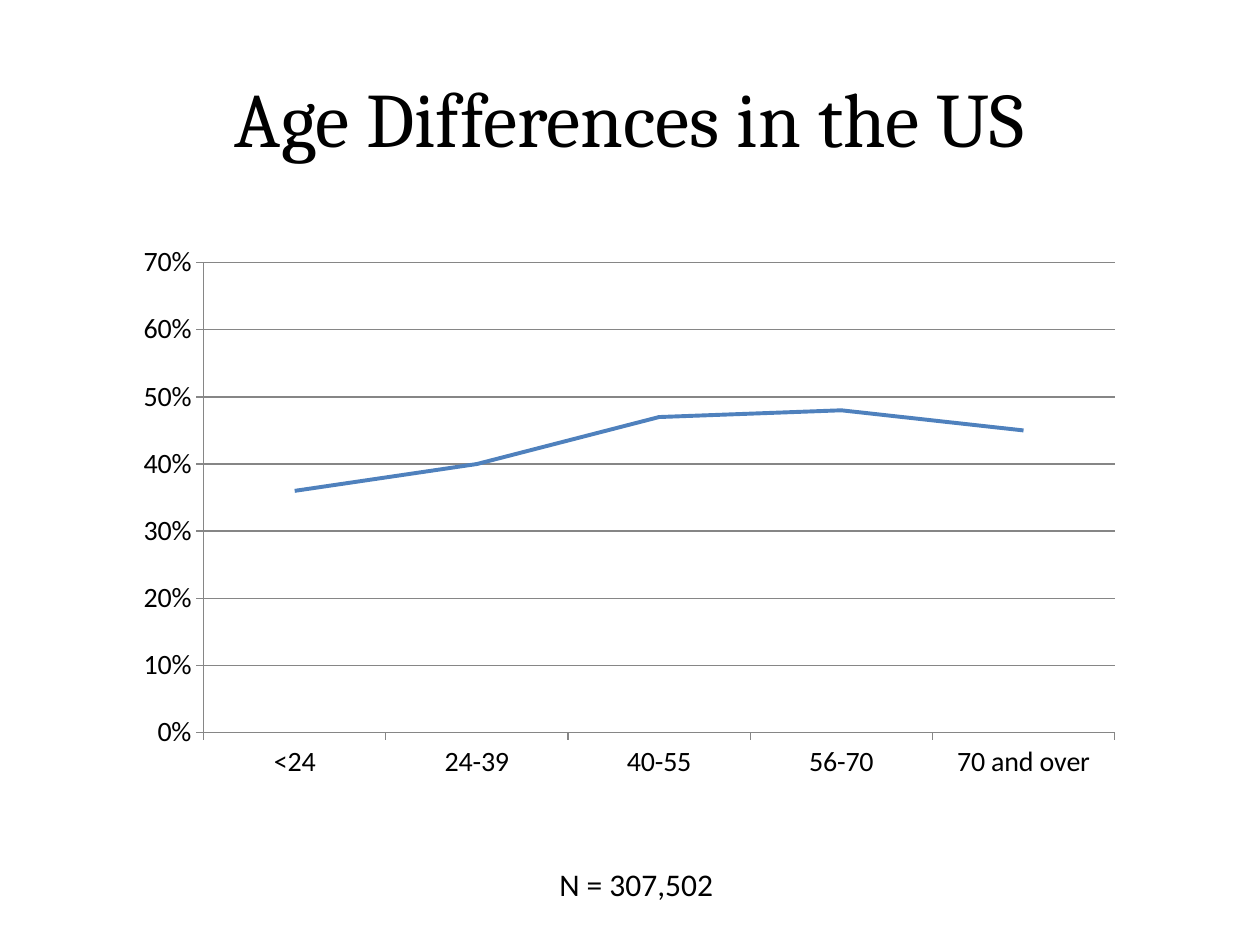
from dataclasses import dataclass

from pptx import Presentation
from pptx.chart.data import CategoryChartData
from pptx.dml.color import RGBColor
from pptx.enum.chart import XL_CHART_TYPE, XL_MARKER_STYLE, XL_TICK_MARK
from pptx.enum.text import MSO_ANCHOR, MSO_AUTO_SIZE, PP_ALIGN
from pptx.util import Pt

LINE_CHART = XL_CHART_TYPE.LINE
NO_MARKER = XL_MARKER_STYLE.NONE
TICK_OUTSIDE = XL_TICK_MARK.OUTSIDE
MIDDLE = MSO_ANCHOR.MIDDLE
FIT_SHAPE = MSO_AUTO_SIZE.SHAPE_TO_FIT_TEXT
CENTER = PP_ALIGN.CENTER
TITLE_ONLY_LAYOUT = 5


@dataclass(frozen=True)
class Theme:
    """Fonts, colours, type sizes and line widths of the deck."""

    title_font: str = "Cambria"
    body_font: str = "Calibri"
    text: RGBColor = RGBColor(0x00, 0x00, 0x00)
    axis: RGBColor = RGBColor(0x86, 0x86, 0x86)
    series: RGBColor = RGBColor(0x4F, 0x81, 0xBD)
    title_size: Pt = Pt(44)
    note_size: Pt = Pt(18)
    axis_size: Pt = Pt(16)
    chart_size: Pt = Pt(10)
    axis_width: Pt = Pt(0.75)
    series_width: Pt = Pt(2.25)


class SlideBuilder:
    """Holds the theme and the current slide and adds elements to it."""

    def __init__(self, slide, theme):
        """Keep the slide and its theme."""
        self.slide = slide
        self.theme = theme

    def style_font(self, font, name, size):
        """Apply a typeface, a size and the text colour."""
        font.name = name
        font.size = size
        font.color.rgb = self.theme.text

    def style_line(self, line, color, width):
        """Apply a colour and a width to a line."""
        line.color.rgb = color
        line.width = width

    def add_title(self, text, left, top, width, height):
        """Place and fill the title placeholder."""
        title = self.slide.shapes.title
        title.left, title.top, title.width, title.height = left, top, width, height
        frame = title.text_frame
        frame.text = text
        frame.vertical_anchor = MIDDLE
        para = frame.paragraphs[0]
        para.alignment = CENTER
        self.style_font(para.runs[0].font, self.theme.title_font, self.theme.title_size)

    def add_note(self, text, left, top, width, height):
        """Add a single line of text in a box that fits it."""
        frame = self.slide.shapes.add_textbox(left, top, width, height).text_frame
        frame.word_wrap = False
        frame.auto_size = FIT_SHAPE
        frame.text = text
        span = frame.paragraphs[0].runs[0]
        self.style_font(span.font, self.theme.body_font, self.theme.note_size)

    def add_line_chart(self, values, left, top, width, height):
        """Add a percentage line chart from a mapping of category to value."""
        theme = self.theme
        chart_data = CategoryChartData(number_format="0%")
        chart_data.categories = list(values)
        chart_data.add_series("Series 1", list(values.values()))
        chart = self.slide.shapes.add_chart(
            LINE_CHART, left, top, width, height, chart_data
        ).chart
        chart.has_legend = False
        chart.has_title = False
        self.style_font(chart.font, theme.body_font, theme.chart_size)

        for axis in (chart.category_axis, chart.value_axis):
            axis.major_tick_mark = TICK_OUTSIDE
            self.style_font(axis.tick_labels.font, theme.body_font, theme.axis_size)
            self.style_line(axis.format.line, theme.axis, theme.axis_width)

        value_axis = chart.value_axis
        value_axis.minimum_scale = 0
        value_axis.maximum_scale = 0.7
        value_axis.major_unit = 0.1
        value_axis.tick_labels.number_format = "0%"
        value_axis.tick_labels.number_format_is_linked = False
        value_axis.has_major_gridlines = True
        gridlines = value_axis.major_gridlines.format.line
        self.style_line(gridlines, theme.axis, theme.axis_width)

        plot = chart.plots[0]
        plot.vary_by_categories = False
        series = plot.series[0]
        series.smooth = False
        series.marker.style = NO_MARKER
        self.style_line(series.format.line, theme.series, theme.series_width)


def main():
    """Build the deck and save it."""
    deck = Presentation()
    deck.slide_width, deck.slide_height = Pt(720), Pt(540)
    page = deck.slides.add_slide(deck.slide_layouts[TITLE_ONLY_LAYOUT])
    builder = SlideBuilder(page, Theme())
    builder.add_title("Age Differences in the US", Pt(36), Pt(21.6), Pt(648), Pt(90))
    shares = {
        "<24": 0.36,
        "24-39": 0.40,
        "40-55": 0.47,
        "56-70": 0.48,
        "70 and over": 0.45,
    }
    builder.add_line_chart(shares, Pt(70.5), Pt(134), Pt(578), Pt(317.5))
    builder.add_note("N = 307,502", Pt(312.5), Pt(491), Pt(103.5), Pt(29))
    deck.save("out.pptx")


if __name__ == "__main__":
    main()
